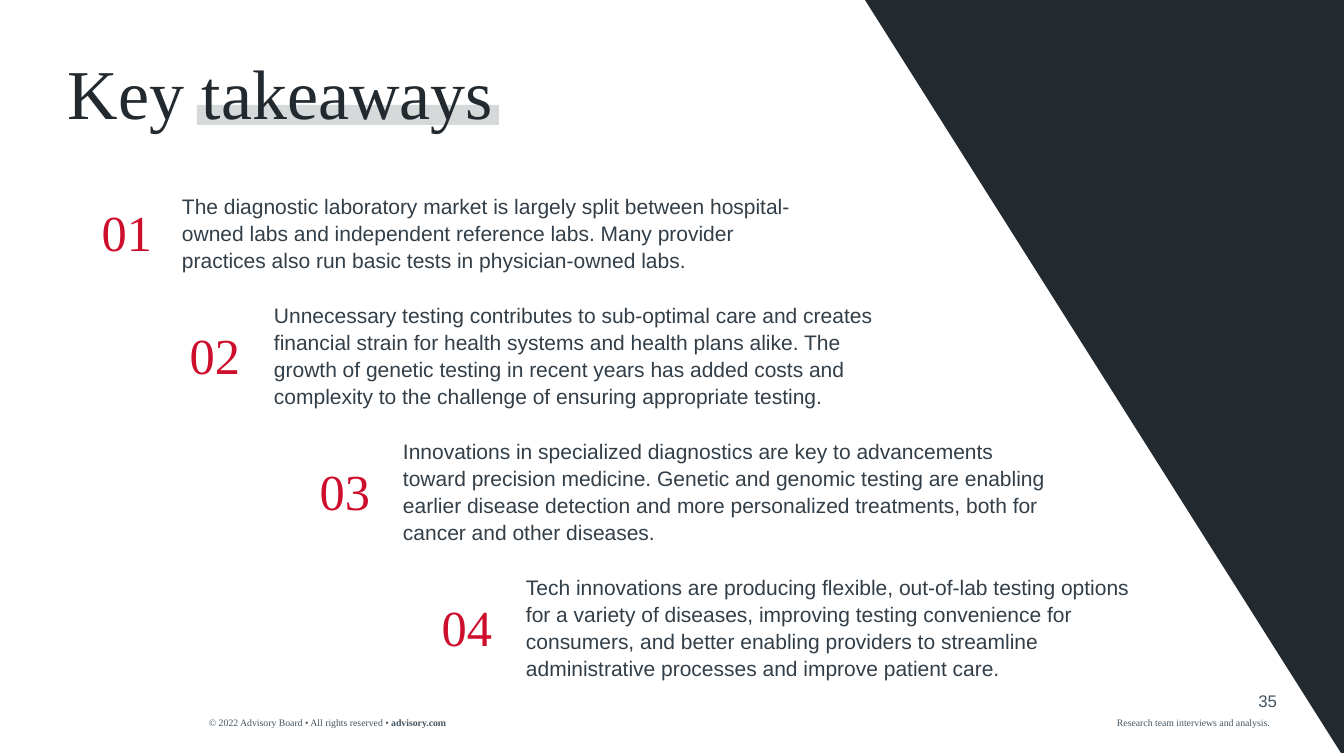
import pptx
import pptx.dml.color
import pptx.enum.shapes
import pptx.enum.text
import pptx.util

PX = 9144000 / 1008
SERIF, SANS = "Times New Roman", "Arial"
INK, BODY, MUTED, RED, HIGHLIGHT = "222A30", "323E48", "445460", "CE0E2D", "D6D9DA"


def px(length):
    return pptx.util.Emu(round(length * PX))


def color(value):
    return pptx.dml.color.RGBColor.from_string(value)


class Canvas:
    def __init__(self, page):
        self.page = page

    def paint(self, shape, fill):
        shape.shadow.inherit = False
        shape.fill.solid()
        shape.fill.fore_color.rgb = color(fill)
        shape.line.fill.background()

    def rectangle(self, left, top, width, height, fill):
        kind = pptx.enum.shapes.MSO_SHAPE.RECTANGLE
        shape = self.page.shapes.add_shape(kind, px(left), px(top), px(width), px(height))
        self.paint(shape, fill)

    def polygon(self, points, fill):
        outline = self.page.shapes.build_freeform(*points[0], scale=PX)
        outline.add_line_segments(points[1:], close=True)
        self.paint(outline.convert_to_shape(), fill)

    def text(self, left, top, width, height, spans, size, font, ink,
             right=False, spacing=None, after=None):
        box = self.page.shapes.add_textbox(px(left), px(top), px(width), px(height))
        frame = box.text_frame
        frame.word_wrap = True
        frame.margin_left = frame.margin_right = 0
        frame.margin_top = frame.margin_bottom = 0
        para = frame.paragraphs[0]
        if right:
            para.alignment = pptx.enum.text.PP_ALIGN.RIGHT
        if spacing:
            para.line_spacing = spacing
        if after:
            para.space_after = pptx.util.Pt(after)
        for words, bold in spans:
            span = para.add_run()
            span.text = words
            span.font.name = font
            span.font.size = pptx.util.Pt(size)
            span.font.bold = bold
            span.font.color.rgb = color(ink)

    def takeaway(self, number, number_left, number_top, number_width,
                 left, top, width, height, words):
        self.text(left, top, width, height, [(words, False)], 15, SANS, BODY,
                  spacing=1.07, after=8)
        self.text(number_left, number_top, number_width, 62, [(f"{number:02d}", False)],
                  36, SERIF, RED, right=True)


TAKEAWAYS = [
    (92, 201, 60, 182, 192, 634, 80,
     "The diagnostic laboratory market is largely split between hospital-owned labs and "
     "independent reference labs. Many provider practices also run basic tests in "
     "physician-owned labs."),
    (185, 324, 55, 274, 301, 634, 107,
     "Unnecessary testing contributes to sub-optimal care and creates financial strain for "
     "health systems and health plans alike. The growth of genetic testing in recent years "
     "has added costs and complexity to the challenge of ensuring appropriate testing."),
    (314, 460, 56, 403, 437, 644, 107,
     "Innovations in specialized diagnostics are key to advancements toward precision "
     "medicine. Genetic and genomic testing are enabling earlier disease detection and more "
     "personalized treatments, both for cancer and other diseases."),
    (435, 596, 57, 526, 573, 611, 107,
     "Tech innovations are producing flexible, out-of-lab testing options for a variety of "
     "diseases, improving testing convenience for consumers, and better enabling providers "
     "to streamline administrative processes and improve patient care."),
]


def main():
    deck = pptx.Presentation()
    deck.slide_width, deck.slide_height = px(1344), px(756)
    canvas = Canvas(deck.slides.add_slide(deck.slide_layouts[6]))

    copyright_spans = [("© 2022 Advisory Board • All rights reserved • ", False),
                       ("advisory.com", True)]
    canvas.text(209, 717, 329, 12, copyright_spans, 7, SERIF, MUTED)
    canvas.text(1117, 717, 162, 12, [("Research team interviews and analysis.", False)],
                7, SERIF, MUTED)
    canvas.text(1227, 691, 50, 20, [("35", False)], 12, SANS, MUTED, right=True)

    canvas.rectangle(197, 105, 302, 20, HIGHLIGHT)
    canvas.text(68, 50, 512, 85, [("Key takeaways", False)], 50, SERIF, INK)
    canvas.polygon([(865, 0), (1344, 0), (1344, 753), (1341, 753)], INK)

    for number, takeaway in enumerate(TAKEAWAYS, 1):
        canvas.takeaway(number, *takeaway)

    deck.save("out.pptx")


if __name__ == "__main__":
    main()
